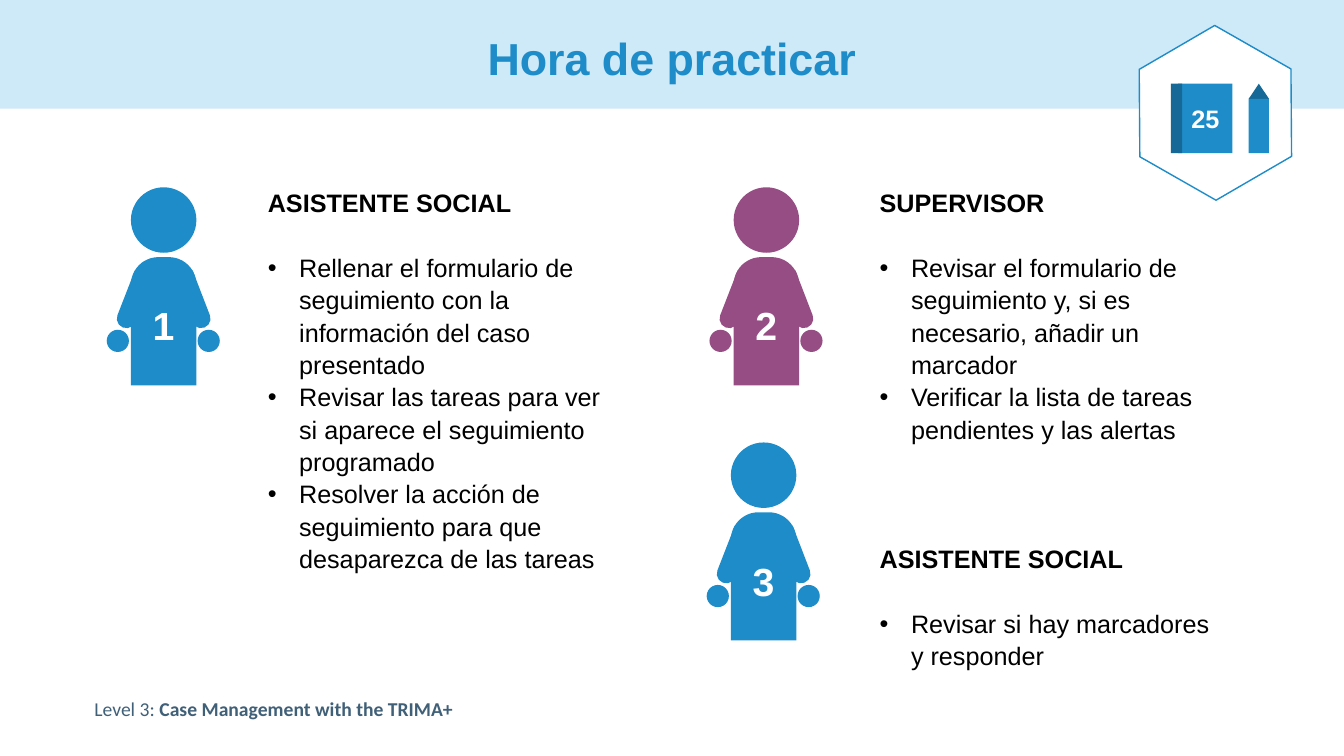
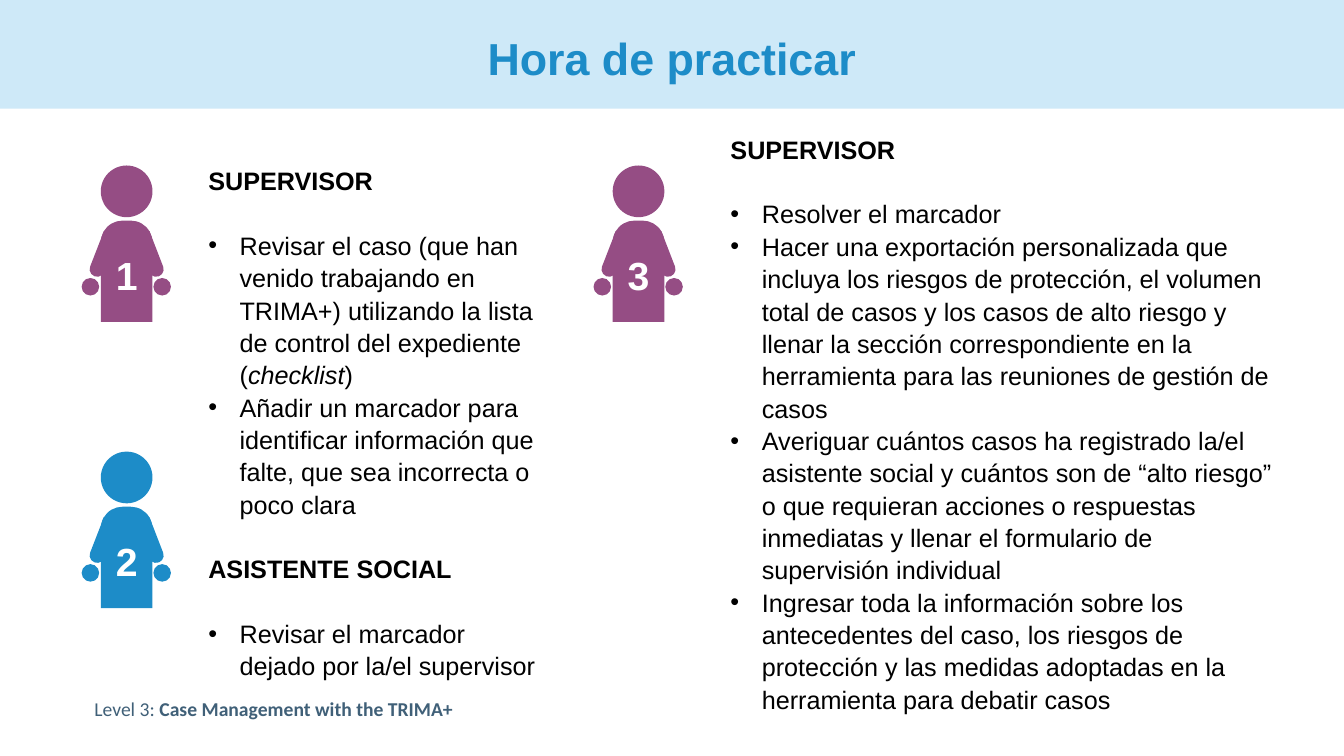
from lxml import etree
from pptx import Presentation
from pptx import util as u
from pptx.dml.color import RGBColor
from pptx.enum import shapes, text
from pptx.oxml import ns

BLUE = RGBColor(0x1D, 0x8C, 0xC8)
DARK_BLUE = RGBColor(0x16, 0x69, 0x96)
PALE_BLUE = RGBColor(0xCE, 0xE9, 0xF8)
PURPLE = RGBColor(0x95, 0x4D, 0x84)
SLATE = RGBColor(0x40, 0x60, 0x78)
BLACK = RGBColor(0x00, 0x00, 0x00)
WHITE = RGBColor(0xFF, 0xFF, 0xFF)

# Text formats
TITLE = {"name": "Arial", "size": u.Pt(32), "bold": True, "color": BLUE}
FOOTER = {"name": "Calibri", "size": u.Pt(14), "bold": False, "color": SLATE}
NUMBER = {"name": "Arial", "size": u.Pt(28), "bold": True, "color": WHITE}
BODY = {"name": "Arial", "size": u.Pt(18), "bold": False, "color": BLACK}
HEADING = BODY | {"bold": True}
BADGE = HEADING | {"color": WHITE}

LINE_HEIGHT = 23.15  # points taken by one line of body text
BULLET_INDENT = u.Cm(0.79)

# Parts of a person, in cm from the top left of the head:
# preset, left, top, width, height, rotation, corner rounding
ROUNDED = shapes.MSO_SHAPE.ROUND_2_SAME_RECTANGLE
OVAL = shapes.MSO_SHAPE.OVAL
PERSON = {
    "body": (ROUNDED, 0, 1.76, 1.65, 3.23, 0, 0.42),
    "head": (OVAL, 0, 0, 1.65, 1.65, 0, None),
    "left arm": (ROUNDED, -0.18, 2.13, 0.48, 1.45, 201.3, 0.49),
    "left hand": (OVAL, -0.61, 3.59, 0.56, 0.56, 0, None),
    "right arm": (ROUNDED, 1.35, 2.13, 0.48, 1.45, 158.9, 0.49),
    "right hand": (OVAL, 1.68, 3.59, 0.56, 0.56, 0, None),
}

# Each slide: size of the people, people (left, top, colour) in number order,
# text columns (box, sections of heading, blank lines above it and bullets);
# words between asterisks are italic
SLIDES = [
    {
        "scale": 1,
        "people": [(3.3, 4.72, BLUE), (18.49, 4.72, PURPLE), (18.42, 11.15, BLUE)],
        "columns": [
            ((6.5, 4.55, 9.25, 10.08), [
                ("ASISTENTE SOCIAL", 0, [
                    "Rellenar el formulario de seguimiento con la información del caso presentado",
                    "Revisar las tareas para ver si aparece el seguimiento programado",
                    "Resolver la acción de seguimiento para que desaparezca de las tareas",
                ]),
            ]),
            ((21.92, 4.55, 9.25, 12.55), [
                ("SUPERVISOR", 0, [
                    "Revisar el formulario de seguimiento y, si es necesario, añadir un marcador",
                    "Verificar la lista de tareas pendientes y las alertas",
                ]),
                ("ASISTENTE SOCIAL", 3, ["Revisar si hay marcadores y responder"]),
            ]),
        ],
        "badge": "25",
    },
    {
        "scale": 0.79,
        "people": [(2.54, 4.17, PURPLE), (2.54, 11.38, BLUE), (15.44, 4.17, PURPLE)],
        "columns": [
            ((5, 3.99, 8.99, 13.36), [
                ("SUPERVISOR", 0, [
                    "Revisar el caso (que han venido trabajando en TRIMA+) utilizando "
                    "la lista de control del expediente (*checklist*)",
                    "Añadir un marcador para identificar información que falte, "
                    "que sea incorrecta o poco clara",
                ]),
                ("ASISTENTE SOCIAL", 1, ["Revisar el marcador dejado por la/el supervisor"]),
            ]),
            ((18.16, 3.2, 14.45, 15.01), [
                ("SUPERVISOR", 0, [
                    "Resolver el marcador",
                    "Hacer una exportación personalizada que incluya los riesgos de "
                    "protección, el volumen total de casos y los casos de alto riesgo y "
                    "llenar la sección correspondiente en la herramienta para las "
                    "reuniones de gestión de casos",
                    "Averiguar cuántos casos ha registrado la/el asistente social y "
                    "cuántos son de “alto riesgo” o que requieran acciones o respuestas "
                    "inmediatas y llenar el formulario de supervisión individual",
                    "Ingresar toda la información sobre los antecedentes del caso, los "
                    "riesgos de protección y las medidas adoptadas en la herramienta "
                    "para debatir casos",
                ]),
            ]),
        ],
        "badge": None,
    },
]


def add_shape(parent, preset, box, fill, line=None, rotation=0, adjustment=None):
    """Add a preset shape, or a text box when there is no preset."""
    box = [u.Cm(length) for length in box]
    if preset is None:
        shape = parent.shapes.add_textbox(*box)
        shape.text_frame.word_wrap = True
        return shape
    shape = parent.shapes.add_shape(preset, *box)
    shape.shadow.inherit = False
    shape.rotation = rotation
    if adjustment is not None:
        shape.adjustments[0] = adjustment
    shape.fill.solid()
    shape.fill.fore_color.rgb = fill
    if line is None:
        shape.line.fill.background()
    else:
        shape.line.color.rgb = line
        shape.line.width = u.Pt(1)
    return shape


def write(paragraph, words, formats, **layout):
    """Add one run in the given font format and set paragraph attributes."""
    run = paragraph.add_run()
    run.text = words
    for name, value in formats.items():
        if name == "color":
            run.font.color.rgb = value
        else:
            setattr(run.font, name, value)
    for name, value in layout.items():
        setattr(paragraph, name, value)


presentation = Presentation()
presentation.slide_width = u.Cm(33.87)
presentation.slide_height = u.Cm(19.05)
RECTANGLE = shapes.MSO_SHAPE.RECTANGLE
CENTER = text.PP_ALIGN.CENTER

for content in SLIDES:
    slide = presentation.slides.add_slide(presentation.slide_layouts[6])

    # Band, footer and title
    add_shape(slide, RECTANGLE, (0, 0, 33.87, 2.74), PALE_BLUE)
    footer = add_shape(slide, None, (2.13, 17.43, 11.56, 0.86), None)
    paragraph = footer.text_frame.paragraphs[0]
    write(paragraph, "Level 3: ", FOOTER)
    write(paragraph, "Case Management with the TRIMA+", FOOTER | {"bold": True})
    title = add_shape(slide, None, (2.33, 0.33, 29.21, 2.41), None)
    title.text_frame.vertical_anchor = text.MSO_ANCHOR.MIDDLE
    write(title.text_frame.paragraphs[0], "Hora de practicar", TITLE,
          alignment=CENTER, line_spacing=0.9)

    # Numbered people
    scale = content["scale"]
    for number, (left, top, color) in enumerate(content["people"], 1):
        person = slide.shapes.add_group_shape()
        for part, (preset, x, y, width, height, rotation, rounding) in PERSON.items():
            box = (left + x * scale, top + y * scale, width * scale, height * scale)
            shape = add_shape(person, preset, box, color,
                              rotation=rotation, adjustment=rounding)
            if part == "body":
                frame = shape.text_frame
                frame.margin_left = frame.margin_right = 0
                frame.vertical_anchor = text.MSO_ANCHOR.MIDDLE
                write(frame.paragraphs[0], str(number), NUMBER, alignment=CENTER)

    # Text columns
    for box, sections in content["columns"]:
        frame = add_shape(slide, None, box, None).text_frame
        paragraph = frame.paragraphs[0]
        for position, (heading, blank_lines, bullets) in enumerate(sections):
            if position:
                paragraph = frame.add_paragraph()
            write(paragraph, heading, HEADING, line_spacing=1.07,
                  space_before=u.Pt(blank_lines * LINE_HEIGHT),
                  space_after=u.Pt(LINE_HEIGHT))
            for bullet in bullets:
                paragraph = frame.add_paragraph()
                for index, words in enumerate(bullet.split("*")):
                    write(paragraph, words, BODY | {"italic": index % 2 == 1},
                          line_spacing=1.07)
                properties = paragraph._p.get_or_add_pPr()
                properties.set("marL", str(BULLET_INDENT))
                properties.set("indent", str(-BULLET_INDENT))
                etree.SubElement(properties, ns.qn("a:buFont"), typeface="Arial")
                etree.SubElement(properties, ns.qn("a:buChar"), char="•")

    # Hexagon badge with workbook and pencil
    if content["badge"]:
        badge = slide.shapes.add_group_shape()
        add_shape(badge, shapes.MSO_SHAPE.HEXAGON, (28.42, 0.94, 4.42, 3.81), WHITE,
                  line=BLUE, rotation=29.7, adjustment=0.29)
        book = add_shape(badge, RECTANGLE, (29.69, 2.11, 1.37, 1.75), BLUE)
        book.text_frame.margin_left = book.text_frame.margin_right = 0
        book.text_frame.vertical_anchor = text.MSO_ANCHOR.MIDDLE
        write(book.text_frame.paragraphs[0], content["badge"], BADGE, alignment=CENTER)
        add_shape(badge, RECTANGLE, (29.51, 2.11, 0.28, 1.75), DARK_BLUE)
        add_shape(badge, shapes.MSO_SHAPE.ISOSCELES_TRIANGLE,
                  (31.47, 2.11, 0.51, 0.38), DARK_BLUE)
        add_shape(badge, RECTANGLE, (31.47, 2.49, 0.51, 1.37), BLUE)

presentation.save("out.pptx")
